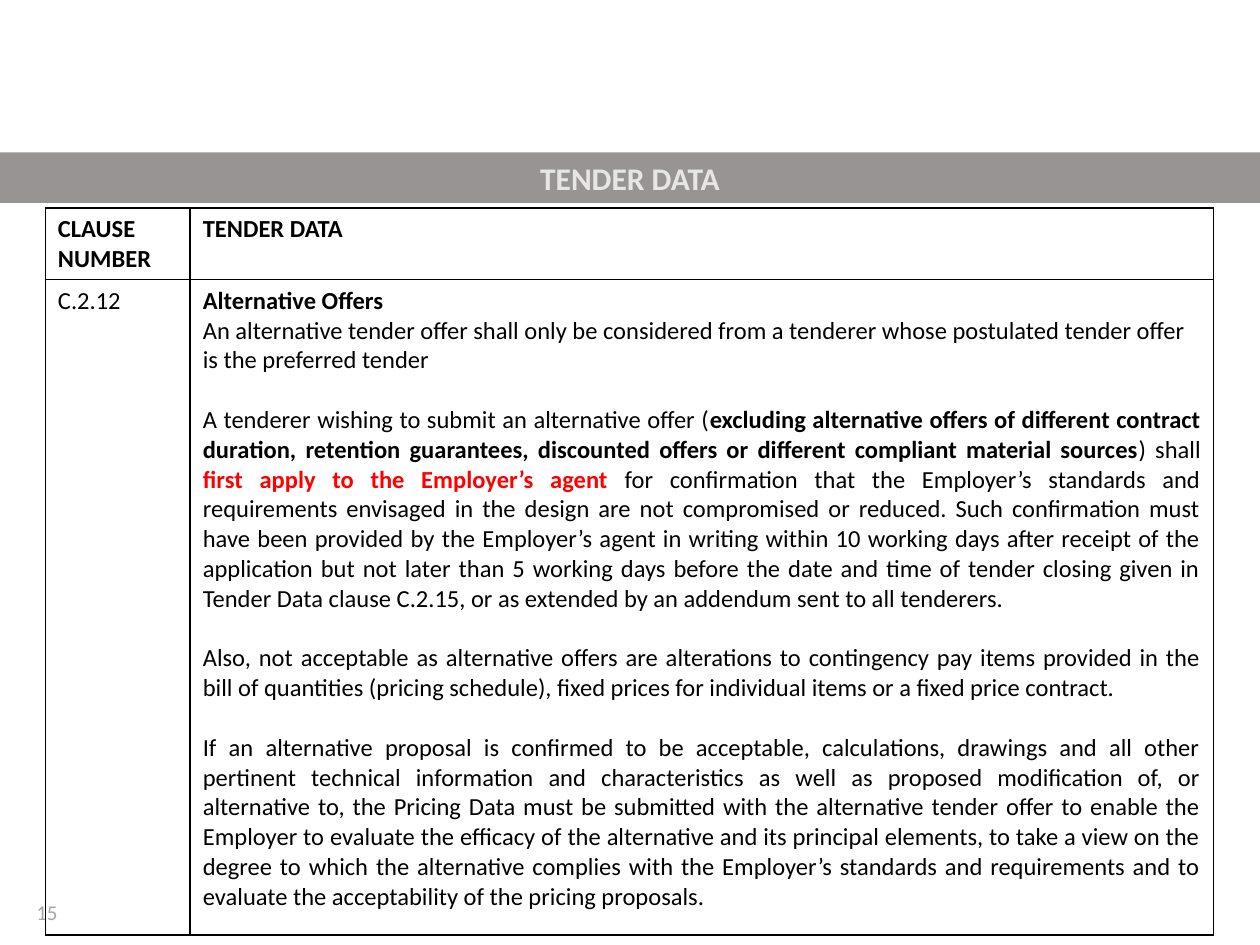
from lxml.etree import SubElement
from pptx import Presentation
from pptx.dml.color import RGBColor
from pptx.enum.text import MSO_ANCHOR, PP_ALIGN
from pptx.oxml import parse_xml
from pptx.oxml.ns import nsdecls
from pptx.util import Inches, Pt

# Content: a paragraph is (runs, alignment, space before); a run is (text, bold, colour)
BLACK, RED, GREY, BAND, PALE = "000000", "FF0000", "A6A6A6", "989494", "E7E6E6"
LEFT, JUSTIFY = PP_ALIGN.LEFT, PP_ALIGN.JUSTIFY
LINE_GAP = 17
TITLE = "TENDER DATA"
PAGE_NUMBER = "15"
COLUMN_WIDTHS = [1.15, 8.12]
ROW_HEIGHTS = [0.57, 5.2]

CLAUSE_TEXT = [
    ([("Alternative Offers", True, BLACK)], LEFT, 0),
    ([("An alternative tender offer shall only be considered from a tenderer whose "
       "postulated tender offer is the preferred tender", False, BLACK)], LEFT, 0),
    ([("A tenderer wishing to submit an alternative offer (", False, BLACK),
      ("excluding alternative offers of different contract duration, retention guarantees, "
       "discounted offers or different compliant material sources", True, BLACK),
      (") shall ", False, BLACK),
      ("first apply to the Employer’s agent ", True, RED),
      ("for confirmation that the Employer’s standards and requirements envisaged in the "
       "design are not compromised or reduced. Such confirmation must have been provided by "
       "the Employer’s agent in writing within 10 working days after receipt of the "
       "application but not later than 5 working days before the date and time of tender "
       "closing given in Tender Data clause C.2.15, or as extended by an addendum sent to "
       "all tenderers.", False, BLACK)], JUSTIFY, LINE_GAP),
    ([("Also, not acceptable as alternative offers are alterations to contingency pay items "
       "provided in the bill of quantities (pricing schedule), fixed prices for individual "
       "items or a fixed price contract.", False, BLACK)], JUSTIFY, LINE_GAP),
    ([("If an alternative proposal is confirmed to be acceptable, calculations, drawings and "
       "all other pertinent technical information and characteristics as well as proposed "
       "modification of, or alternative to, the Pricing Data must be submitted with the "
       "alternative tender offer to enable the Employer to evaluate the efficacy of the "
       "alternative and its principal elements, to take a view on the degree to which the "
       "alternative complies with the Employer’s standards and requirements and to evaluate "
       "the acceptability of the pricing proposals.", False, BLACK)], JUSTIFY, LINE_GAP),
]
ROWS = [
    [[([("CLAUSE NUMBER", True, BLACK)], LEFT, 0)],
     [([("TENDER DATA", True, BLACK)], LEFT, 0)]],
    [[([("C.2.12", False, BLACK)], LEFT, 0)], CLAUSE_TEXT],
]


def set_font(font, size, color, bold=False):
    font.name = "Calibri"
    font.size = Pt(size)
    font.bold = bold
    font.color.rgb = RGBColor.from_string(color)


def place(shape, left, top, width, height):
    shape.left, shape.top = Inches(left), Inches(top)
    shape.width, shape.height = Inches(width), Inches(height)


def fill_cell(cell, paragraphs):
    frame = cell.text_frame
    for index, (runs, alignment, space_before) in enumerate(paragraphs):
        paragraph = frame.add_paragraph() if index else frame.paragraphs[0]
        paragraph.alignment = alignment
        paragraph.space_before = Pt(space_before)
        for text, bold, color in runs:
            run = paragraph.add_run()
            run.text = text
            set_font(run.font, 14, color, bold)


def add_borders(cell):
    properties = cell._tc.get_or_add_tcPr()
    for index, side in enumerate(("lnL", "lnR", "lnT", "lnB")):
        border = parse_xml(f'<a:{side} {nsdecls("a")} w="{Pt(1)}"><a:solidFill>'
                           f'<a:srgbClr val="{BLACK}"/></a:solidFill></a:{side}>')
        properties.insert(index, border)


presentation = Presentation()
presentation.slide_width, presentation.slide_height = Inches(10), Inches(7.5)
slide = presentation.slides.add_slide(presentation.slide_layouts[5])

# Title band
title = slide.shapes.title
place(title, 0, 1.21, 10, 0.4)
title.fill.solid()
title.fill.fore_color.rgb = RGBColor.from_string(BAND)
title.text_frame.text = TITLE
title.text_frame.vertical_anchor = MSO_ANCHOR.MIDDLE
title.text_frame.paragraphs[0].alignment = PP_ALIGN.CENTER
set_font(title.text_frame.paragraphs[0].font, 18, PALE, True)

# Page number
number = slide.shapes.add_textbox(Inches(0.19), Inches(7.04), Inches(2.25), Inches(0.4))
number.text_frame.word_wrap = True
number.text_frame.vertical_anchor = MSO_ANCHOR.MIDDLE
number.text_frame.text = PAGE_NUMBER
set_font(number.text_frame.paragraphs[0].font, 12, GREY)

# Clause table
table = slide.shapes.add_table(
    len(ROWS), len(COLUMN_WIDTHS), Inches(0.36), Inches(1.65),
    Inches(sum(COLUMN_WIDTHS)), Inches(sum(ROW_HEIGHTS))).table
table.horz_banding = False
for column, width in zip(table.columns, COLUMN_WIDTHS):
    column.width = Inches(width)
for row, height, contents in zip(table.rows, ROW_HEIGHTS, ROWS):
    row.height = Inches(height)
    for cell, paragraphs in zip(row.cells, contents):
        cell.fill.background()
        add_borders(cell)
        fill_cell(cell, paragraphs)

presentation.save("out.pptx")
